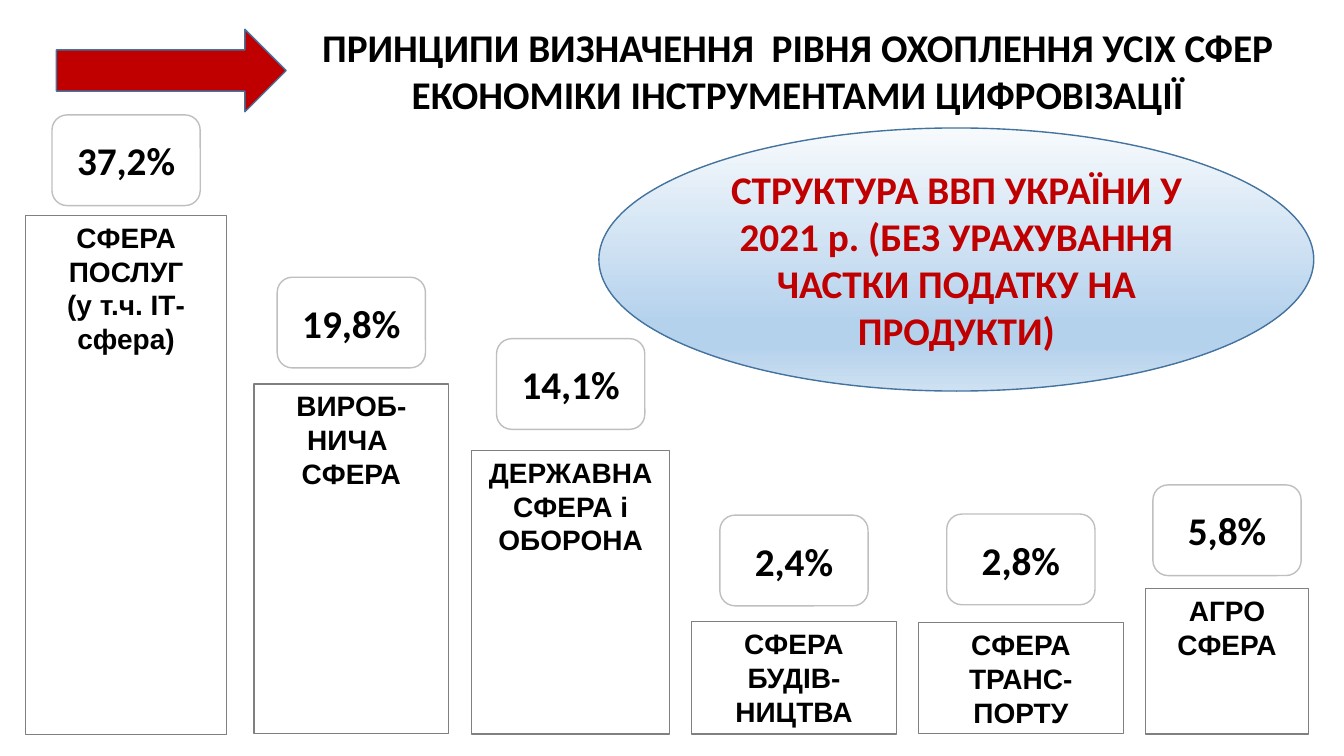
from copy import deepcopy
from dataclasses import dataclass

from pptx import Presentation
from pptx.dml.color import RGBColor
from pptx.enum.shapes import MSO_SHAPE
from pptx.enum.text import MSO_ANCHOR, MSO_AUTO_SIZE, PP_ALIGN
from pptx.util import Inches, Pt

BLACK = RGBColor(0x00, 0x00, 0x00)
RED = RGBColor(0xC0, 0x00, 0x00)
BLUE_EDGE = RGBColor(0x43, 0x73, 0x9E)
BAR_EDGE = RGBColor(0x80, 0x80, 0x80)
BADGE_EDGE = RGBColor(0xBF, 0xBF, 0xBF)
ELLIPSE_STOPS = [
    (0, RGBColor(0xF7, 0xFA, 0xFD)),
    (0.74, RGBColor(0xB5, 0xD2, 0xEC)),
    (0.83, RGBColor(0xB5, 0xD2, 0xEC)),
    (1, RGBColor(0xCE, 0xE1, 0xF2)),
]

SLIDE_WIDTH, SLIDE_HEIGHT = Inches(13.33), Inches(7.5)

# Lengths are percentages of the slide's width and height
BASELINE = 97.1
BADGE_WIDTH, BADGE_HEIGHT = 11.03, 12

TITLE = "ПРИНЦИПИ ВИЗНАЧЕННЯ  РІВНЯ ОХОПЛЕННЯ УСІХ СФЕР ЕКОНОМІКИ ІНСТРУМЕНТАМИ ЦИФРОВІЗАЦІЇ"
TOPIC = "СТРУКТУРА ВВП УКРАЇНИ У 2021 р. (БЕЗ УРАХУВАННЯ ЧАСТКИ ПОДАТКУ НА ПРОДУКТИ)"

# Share, left, width, top of the bar, gap under the badge, label lines
SECTORS = [
    ("37,2%", 1.88, 15, 28.53, 1.33, ["СФЕРА", "ПОСЛУГ", "(у т.ч. ІТ-сфера)"]),
    ("19,8%", 18.9, 14.48, 50.8, 2.13, ["ВИРОБ-НИЧА ", "СФЕРА"]),
    ("14,1%", 35.11, 14.7, 59.6, 2.8, ["ДЕРЖАВНА", "СФЕРА і ОБОРОНА"]),
    ("2,4%", 51.46, 15.23, 82.27, 2.13, ["СФЕРА", "БУДІВ-", "НИЦТВА"]),
    ("2,8%", 68.34, 15.23, 82.4, 2.4, ["СФЕРА", "ТРАНС-ПОРТУ"]),
    ("5,8%", 85.22, 12.15, 77.87, 1.73, ["АГРО", "СФЕРА"]),
]


@dataclass
class Box:
    left: float
    top: float
    width: float
    height: float

    def frame(self):
        return (int(SLIDE_WIDTH * self.left / 100), int(SLIDE_HEIGHT * self.top / 100),
                int(SLIDE_WIDTH * self.width / 100), int(SLIDE_HEIGHT * self.height / 100))


def write_lines(shape, lines, size=28, font="Calibri", color=BLACK, anchor=MSO_ANCHOR.MIDDLE):
    text = shape.text_frame
    text.word_wrap = True
    text.auto_size = MSO_AUTO_SIZE.NONE
    text.vertical_anchor = anchor
    for index, line in enumerate(lines):
        para = text.paragraphs[0] if index == 0 else text.add_paragraph()
        para.alignment = PP_ALIGN.CENTER
        span = para.add_run()
        span.text = line
        span.font.size = Pt(size)
        span.font.name = font
        span.font.bold = True
        span.font.color.rgb = color


def add_outlined(page, kind, box, edge, weight=1):
    shape = page.shapes.add_shape(kind, *box.frame())
    shape.shadow.inherit = False
    shape.fill.background()
    shape.line.color.rgb = edge
    shape.line.width = Pt(weight)
    return shape


def add_header(page, box):
    """Title on the right of the box, red arrow on its left."""
    title = page.shapes.title
    title_box = Box(box.left + 17.1, box.top, box.width - 17.1, box.height)
    title.left, title.top, title.width, title.height = title_box.frame()
    write_lines(title, [TITLE])

    arrow_box = Box(box.left, box.top + 2.14, 17.1, 10.93)
    arrow = add_outlined(page, MSO_SHAPE.RIGHT_ARROW, arrow_box, BLUE_EDGE)
    arrow.fill.solid()
    arrow.fill.fore_color.rgb = RED


def add_sector(page, box, share, gap, label):
    """Labelled bar filling the box, with its share centred above."""
    bar = add_outlined(page, MSO_SHAPE.RECTANGLE, box, BAR_EDGE, 0.75)
    write_lines(bar, label, 20, "Arial", anchor=MSO_ANCHOR.TOP)

    badge_box = Box(box.left + (box.width - BADGE_WIDTH) / 2,
                    box.top - gap - BADGE_HEIGHT, BADGE_WIDTH, BADGE_HEIGHT)
    badge = add_outlined(page, MSO_SHAPE.ROUNDED_RECTANGLE, badge_box, BADGE_EDGE)
    write_lines(badge, [share])


def add_topic(page, box):
    """Ellipse with a vertical gradient and the topic of the chart."""
    ellipse = add_outlined(page, MSO_SHAPE.OVAL, box, BLUE_EDGE)
    fill = ellipse.fill
    fill.gradient()
    fill.gradient_angle = 270
    stop_list = ellipse.element.spPr.find(".//{*}gsLst")
    while len(stop_list) < len(ELLIPSE_STOPS):
        stop_list.append(deepcopy(stop_list[0]))
    for stop, (position, color) in zip(fill.gradient_stops, ELLIPSE_STOPS):
        stop.position = position
        stop.color.rgb = color
    write_lines(ellipse, [TOPIC], color=RED)


def main():
    deck = Presentation()
    deck.slide_width, deck.slide_height = SLIDE_WIDTH, SLIDE_HEIGHT
    page = deck.slides.add_slide(deck.slide_layouts.get_by_name("Title Only"))

    add_header(page, Box(4.2, 1.73, 93.17, 15.2))
    for share, left, width, top, gap, label in SECTORS:
        add_sector(page, Box(left, top, width, BASELINE - top), share, gap, label)
    add_topic(page, Box(44.56, 16.93, 53.19, 34.8))

    deck.save("out.pptx")


if __name__ == "__main__":
    main()
